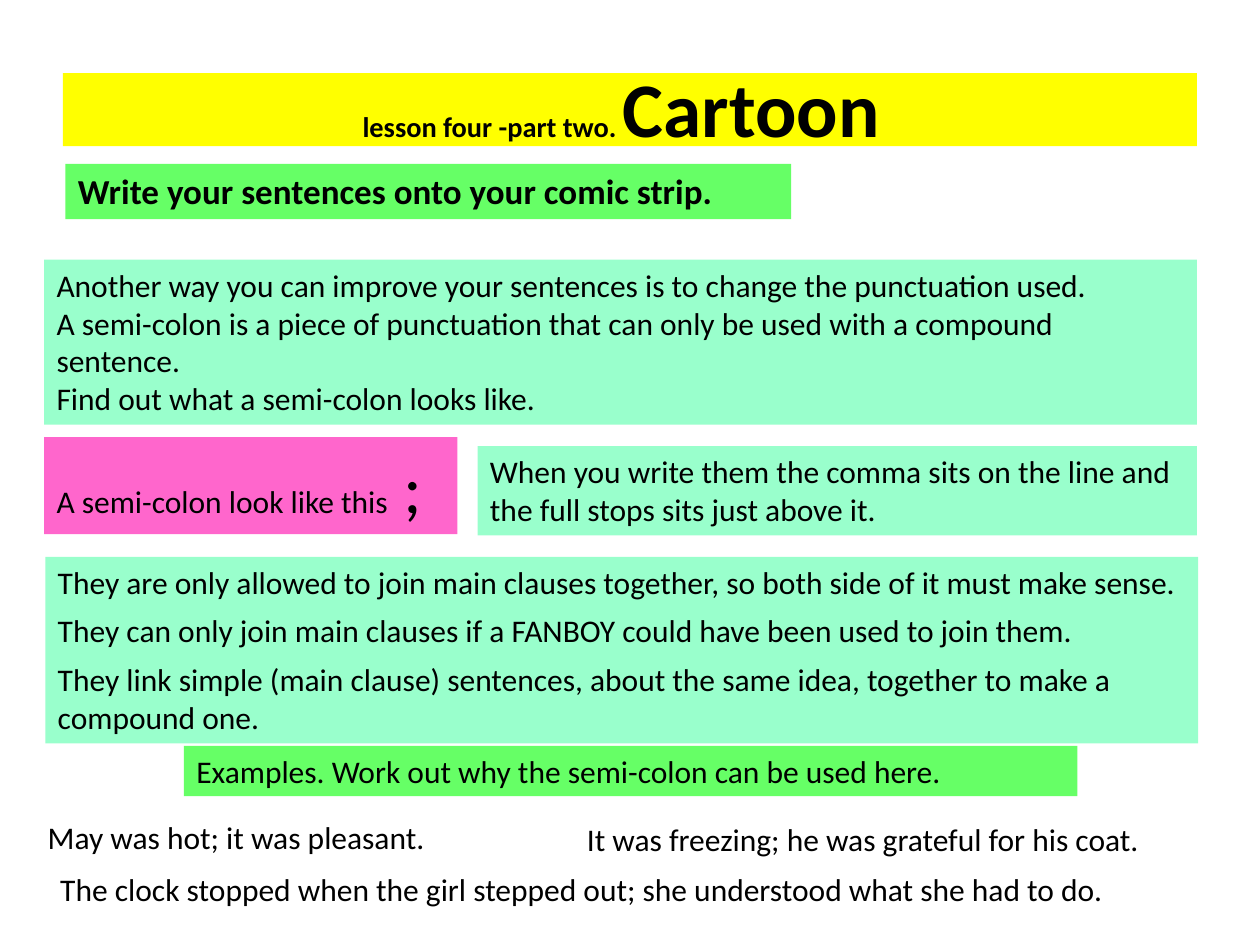
from dataclasses import dataclass

from pptx import Presentation
from pptx import util as u
from pptx.dml.color import RGBColor
from pptx.enum import shapes, text


@dataclass(frozen=True)
class Theme:
    font: str = "Calibri"
    ink: str = "000000"
    yellow: str = "FFFF00"
    green: str = "66FF66"
    mint: str = "99FFCC"
    pink: str = "FF66CC"
    lesson: float = 16.2
    topic: float = 44.1
    task: float = 20
    body: float = 18
    symbol: float = 40


class LessonSlide:
    def __init__(self, deck, theme):
        self.theme = theme
        self.slide = deck.slides.add_slide(deck.slide_layouts[6])

    def panel(self, place, color, paragraphs, **style):
        box = self.slide.shapes.add_shape(
            shapes.MSO_SHAPE.RECTANGLE, *map(u.Inches, place))
        box.shadow.inherit = False
        box.fill.solid()
        box.fill.fore_color.rgb = RGBColor.from_string(color)
        box.line.fill.background()
        return self.add_runs(box.text_frame, paragraphs, **style)

    def label(self, place, sentence):
        box = self.slide.shapes.add_textbox(*map(u.Inches, place))
        return self.add_runs(box.text_frame, self.body(sentence))

    def add_runs(self, frame, paragraphs, bold=False, gap=0,
                 align=text.PP_ALIGN.LEFT, anchor=text.MSO_ANCHOR.TOP):
        frame.word_wrap = True
        frame.vertical_anchor = anchor
        for index, runs in enumerate(paragraphs):
            paragraph = frame.add_paragraph() if index else frame.paragraphs[0]
            paragraph.alignment = align
            paragraph.space_before = u.Pt(gap if index else 0)
            for words, size in runs:
                run = paragraph.add_run()
                run.text = words
                run.font.name = self.theme.font
                run.font.size = u.Pt(size)
                run.font.bold = bold
                run.font.color.rgb = RGBColor.from_string(self.theme.ink)
        return frame

    def body(self, *sentences):
        return [[(sentence, self.theme.body)] for sentence in sentences]


def main():
    deck = Presentation()
    deck.slide_width, deck.slide_height = u.Inches(10), u.Inches(7.5)
    theme = Theme()
    lesson = LessonSlide(deck, theme)

    heading = lesson.panel(
        (0.5, 0.58, 9, 0.58), theme.yellow,
        [[("lesson four -part two. ", theme.lesson), ("Cartoon ", theme.topic)]],
        bold=True, align=text.PP_ALIGN.CENTER, anchor=text.MSO_ANCHOR.MIDDLE)
    heading.margin_bottom = u.Inches(0.1)

    lesson.panel(
        (0.52, 1.3, 5.76, 0.44), theme.green,
        [[("Write your sentences onto your comic strip.", theme.task)]], bold=True)
    lesson.panel((0.35, 2.06, 9.15, 1.31), theme.mint, lesson.body(
        "Another way you can improve your sentences is to change the punctuation used.",
        "A semi-colon is a piece of punctuation that can only be used with a compound sentence.",
        "Find out what a semi-colon looks like."))
    lesson.panel(
        (0.35, 3.47, 3.28, 0.77), theme.pink,
        [[("A semi-colon look like this", theme.body), (" ;", theme.symbol)]])
    lesson.panel((3.79, 3.54, 5.71, 0.71), theme.mint, lesson.body(
        "When you write them the comma sits on the line and the full stops sits just above it."))
    lesson.panel((0.36, 4.42, 9.15, 1.48), theme.mint, lesson.body(
        "They are only allowed to join main clauses together, so both side of it must make sense.",
        "They can only join main clauses if a FANBOY could have been used to join them.",
        "They link simple (main clause) sentences, about the same idea, together to make a compound one."),
        gap=6)
    lesson.panel((1.46, 5.92, 7.09, 0.4), theme.green, lesson.body(
        "Examples. Work out why the semi-colon can be used here."))

    examples = [
        ((0.28, 6.44, 4.26, 0.4), "May was hot; it was pleasant."),
        ((4.56, 6.46, 5.13, 0.4), "It was freezing; he was grateful for his coat."),
        ((0.38, 6.86, 9.13, 0.4),
         "The clock stopped when the girl stepped out; she understood what she had to do."),
    ]
    for place, sentence in examples:
        lesson.label(place, sentence)

    deck.save("out.pptx")


if __name__ == "__main__":
    main()
